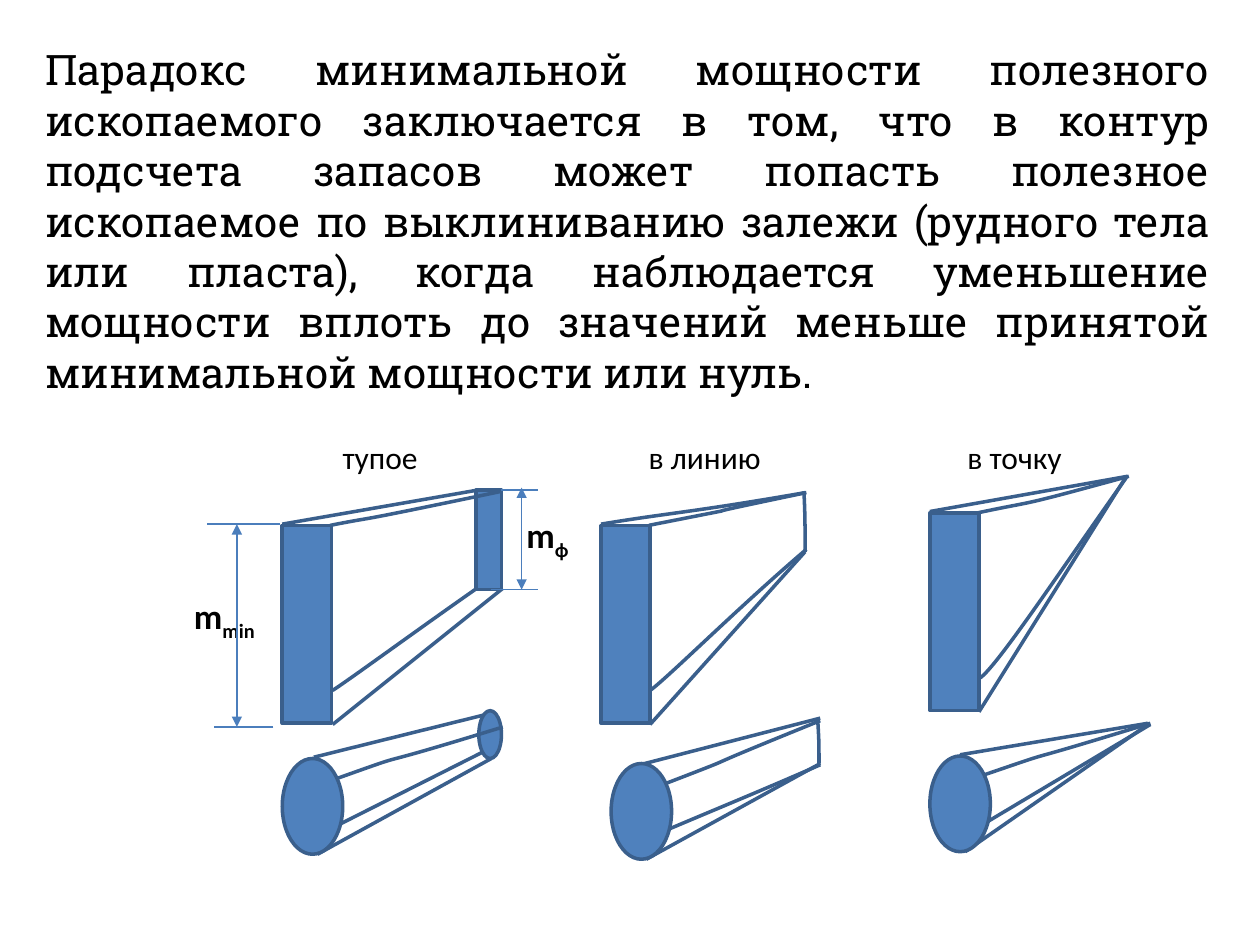
from typing import NamedTuple

from lxml import etree
from pptx import Presentation
from pptx import util as u
from pptx.dml.color import RGBColor
from pptx.enum import shapes, text
from pptx.oxml.ns import qn

COLOURS = {"body": "4F81BD", "edge": "3A5F8C", "dimension": "4B7EBC", "text": "000000"}
Point = tuple[float, float]


class Body(NamedTuple):
    kind: shapes.MSO_SHAPE
    left: float
    top: float
    width: float
    height: float


class Edge(NamedTuple):
    """Two points make a straight edge, four a cubic curve."""
    points: tuple[Point, ...]


class Dimension(NamedTuple):
    start: Point
    end: Point
    arrows: bool = False


class Label(NamedTuple):
    text: str
    left: float
    top: float
    width: float
    height: float
    size: int = 18
    subscript: str = ""


def length(inches: float) -> u.Length:
    return u.Cm(inches * 2.54)


def colour(name: str) -> RGBColor:
    return RGBColor.from_string(COLOURS[name])


def style_outline(shape) -> None:
    shape.shadow.inherit = False
    shape.line.color.rgb = colour("edge")
    shape.line.width = u.Pt(2)


def style_run(run, size: int, font: str, bold: bool = False) -> None:
    run.font.size = u.Pt(size)
    run.font.name = font
    run.font.bold = bold
    run.font.color.rgb = colour("text")


def draw_body(group, body: Body) -> None:
    shape = group.shapes.add_shape(body.kind, *map(length, body[1:]))
    style_outline(shape)
    shape.fill.solid()
    shape.fill.fore_color.rgb = colour("body")


def bend(shape, handles: list[tuple[int, int]]) -> None:
    """Turn the only line segment of the shape into a cubic curve."""
    segment = next(shape._element.iter(qn("a:lnTo")))
    curve = etree.Element(qn("a:cubicBezTo"))
    for x, y in handles:
        handle = etree.SubElement(curve, qn("a:pt"))
        handle.set("x", str(x - shape.left))
        handle.set("y", str(y - shape.top))
    curve.append(segment[0])
    segment.getparent().replace(segment, curve)


def draw_edge(group, edge: Edge) -> None:
    start, *handles, end = [(length(x), length(y)) for x, y in edge.points]
    builder = group.shapes.build_freeform(*start)
    builder.add_line_segments([end], close=False)
    shape = builder.convert_to_shape()
    if handles:
        bend(shape, handles)
    style_outline(shape)
    shape.fill.background()


def draw_dimension(group, dimension: Dimension) -> None:
    ends = map(length, dimension.start + dimension.end)
    connector = group.shapes.add_connector(shapes.MSO_CONNECTOR.STRAIGHT, *ends)
    connector.line.color.rgb = colour("dimension")
    connector.line.width = u.Pt(0.75)
    if dimension.arrows:
        line = connector.line._get_or_add_ln()
        for end in ("a:headEnd", "a:tailEnd"):
            etree.SubElement(line, qn(end)).set("type", "triangle")
    etree.SubElement(connector._element.spPr, qn("a:effectLst"))


def draw_label(group, label: Label) -> None:
    box = group.shapes.add_textbox(*map(length, label[1:5]))
    frame = box.text_frame
    frame.text = label.text
    frame.word_wrap = False
    frame.auto_size = text.MSO_AUTO_SIZE.SHAPE_TO_FIT_TEXT
    paragraph = frame.paragraphs[0]
    if label.subscript:
        run = paragraph.add_run()
        run.text = label.subscript
        run._r.get_or_add_rPr().set("baseline", "-25000")
    for run in paragraph.runs:
        style_run(run, label.size, "Calibri", bool(label.subscript))


def draw_statement(slide, wording: str) -> None:
    box = slide.shapes.add_textbox(*map(length, (0.26, 0.3, 9.44, 2.93)))
    frame = box.text_frame
    frame.text = wording
    frame.word_wrap = True
    frame.auto_size = text.MSO_AUTO_SIZE.SHAPE_TO_FIT_TEXT
    frame.paragraphs[0].alignment = text.PP_ALIGN.JUSTIFY
    style_run(frame.paragraphs[0].runs[0], 24, "Roboto Slab")


def slab(left: float, top: float) -> Body:
    return Body(shapes.MSO_SHAPE.RECTANGLE, left, top, 0.39, 1.57)


def cylinder(left: float, top: float) -> Body:
    return Body(shapes.MSO_SHAPE.OVAL, left, top, 0.48, 0.76)


def edge(*points: Point) -> Edge:
    return Edge(points)


STATEMENT = (
    "Парадокс минимальной мощности полезного ископаемого заключается в том, что в контур "
    "подсчета запасов может попасть полезное ископаемое по выклиниванию залежи (рудного тела "
    "или пласта), когда наблюдается уменьшение мощности вплоть до значений меньше принятой "
    "минимальной мощности или нуль."
)

# Each part of the drawing, from back to front
PARTS = [
    # Slab with a blunt end
    slab(2.24, 4.17),
    Body(shapes.MSO_SHAPE.RECTANGLE, 3.78, 3.89, 0.2, 0.79),
    edge((2.62, 4.17), (3.08, 4.08), (2.64, 4.18), (3.98, 3.9)),
    edge((2.24, 4.16), (3.79, 3.89)),
    edge((2.64, 5.75), (3.99, 4.67)),
    edge((2.64, 5.48), (2.78, 5.39), (3.27, 5.03), (3.77, 4.68)),
    # Slab narrowing to a line
    slab(4.77, 4.17),
    edge((5.15, 4.17), (6.37, 3.93), (5.06, 4.19), (6.4, 3.91)),
    edge((4.77, 4.16), (5.31, 4.07), (5.47, 4.07), (6.39, 3.91)),
    edge((5.16, 5.75), (6.39, 4.38)),
    edge((5.16, 5.48), (5.3, 5.38), (5.85, 4.83), (6.4, 4.36)),
    # Slab narrowing to a point
    slab(7.38, 4.07),
    edge((7.76, 4.07), (8.28, 3.96), (8.01, 4.04), (8.96, 3.78)),
    edge((7.38, 4.06), (8.95, 3.78)),
    edge((7.77, 5.65), (8.94, 3.78)),
    edge((7.78, 5.38), (7.92, 5.28), (8.43, 4.51), (8.94, 3.79)),
    # End line of the middle slab
    edge((6.38, 3.9), (6.39, 4.06), (6.39, 4.22), (6.39, 4.38)),
    # Headings
    Label("тупое", 2.62, 3.43, 0.81, 0.4),
    Label("в линию", 5.05, 3.43, 1.12, 0.4),
    Label("в точку", 7.58, 3.43, 0.98, 0.4),
    # Cylinder with a blunt end
    edge((2.49, 6.01), (3.9, 5.66)),
    edge((2.52, 6.78), (3.9, 6.02)),
    edge((2.7, 6.54), (3.83, 5.97)),
    cylinder(2.24, 6.02),
    Body(shapes.MSO_SHAPE.OVAL, 3.8, 5.64, 0.18, 0.38),
    edge((2.67, 6.18), (3.4, 5.92), (2.76, 6.15), (3.99, 5.77)),
    # Cylinder narrowing to a line
    edge((5.08, 6.07), (6.51, 5.7)),
    edge((5.13, 6.82), (6.51, 6.06)),
    edge((5.31, 6.58), (5.71, 6.41), (5.96, 6.31), (6.51, 6.07)),
    cylinder(4.85, 6.06),
    edge((5.28, 6.22), (6.06, 5.92), (5.3, 6.21), (6.51, 5.72)),
    # Cylinder narrowing to a point
    edge((7.62, 5.99), (9.11, 5.74)),
    edge((7.66, 6.76), (9.11, 5.75)),
    edge((7.84, 6.52), (9.13, 5.75)),
    cylinder(7.38, 6),
    edge((7.81, 6.15), (8.54, 5.9), (7.9, 6.12), (9.13, 5.74)),
    # End line of the middle cylinder
    edge((6.49, 5.72), (6.5, 5.88), (6.5, 5.9), (6.5, 6.06)),
    # Minimum thickness
    Label("m", 1.44, 4.67, 0.73, 0.44, 20, "min"),
    Dimension((2.22, 4.16), (1.64, 4.16)),
    Dimension((2.17, 5.77), (1.7, 5.77)),
    Dimension((1.88, 4.16), (1.88, 5.77), arrows=True),
    # Actual thickness
    Dimension((4.27, 3.89), (3.98, 3.89)),
    Dimension((4.27, 4.68), (3.9, 4.68)),
    Dimension((4.14, 3.87), (4.14, 4.68), arrows=True),
    Label("m", 4.08, 4.03, 0.56, 0.44, 20, "ф"),
]
DRAWERS = {Body: draw_body, Edge: draw_edge, Dimension: draw_dimension, Label: draw_label}


def main() -> None:
    presentation = Presentation()
    presentation.slide_width, presentation.slide_height = u.Cm(25.4), u.Cm(19.05)
    slide = presentation.slides.add_slide(presentation.slide_layouts[6])
    draw_statement(slide, STATEMENT)
    group = slide.shapes.add_group_shape()
    for part in PARTS:
        DRAWERS[type(part)](group, part)
    presentation.save("out.pptx")


if __name__ == "__main__":
    main()
